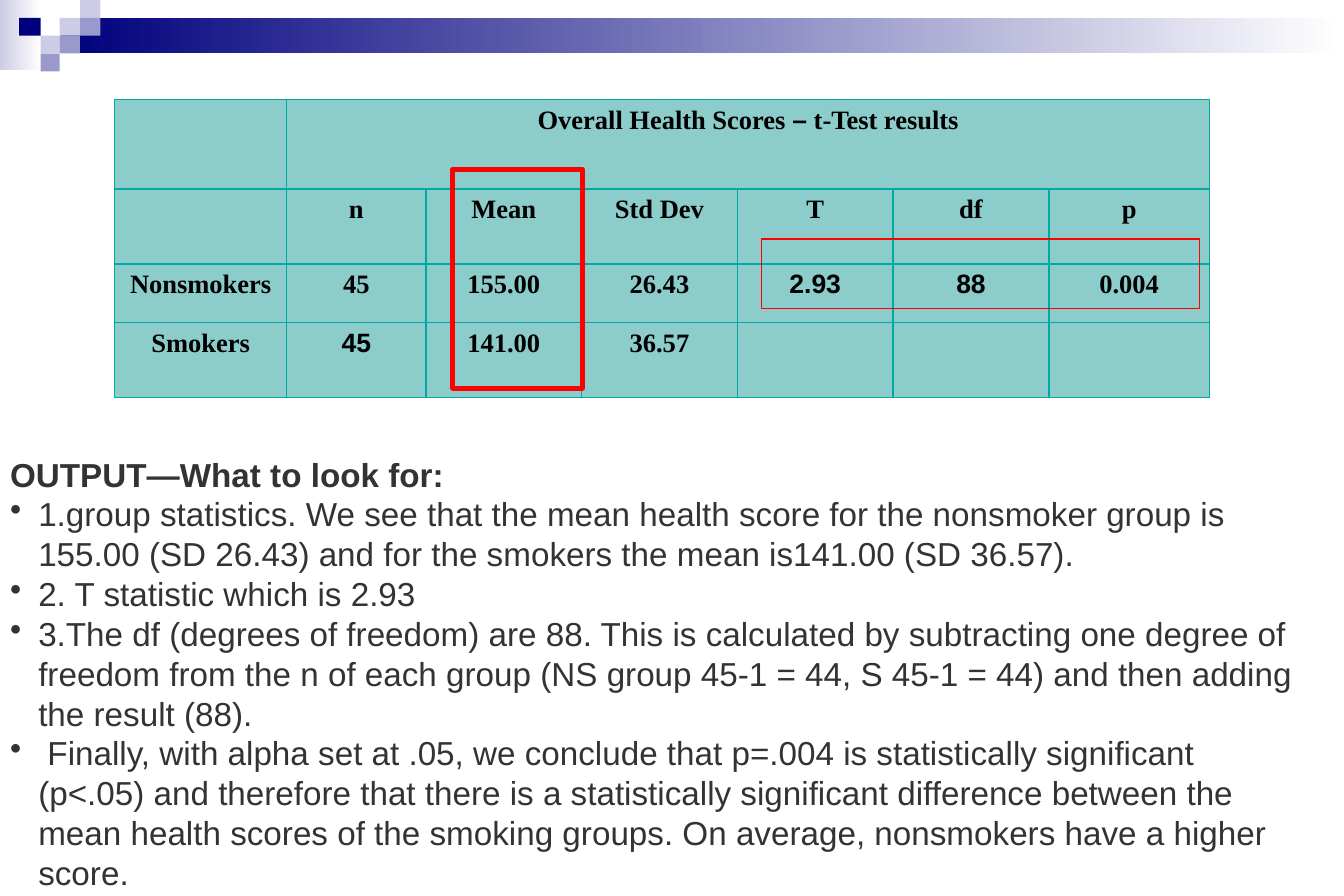
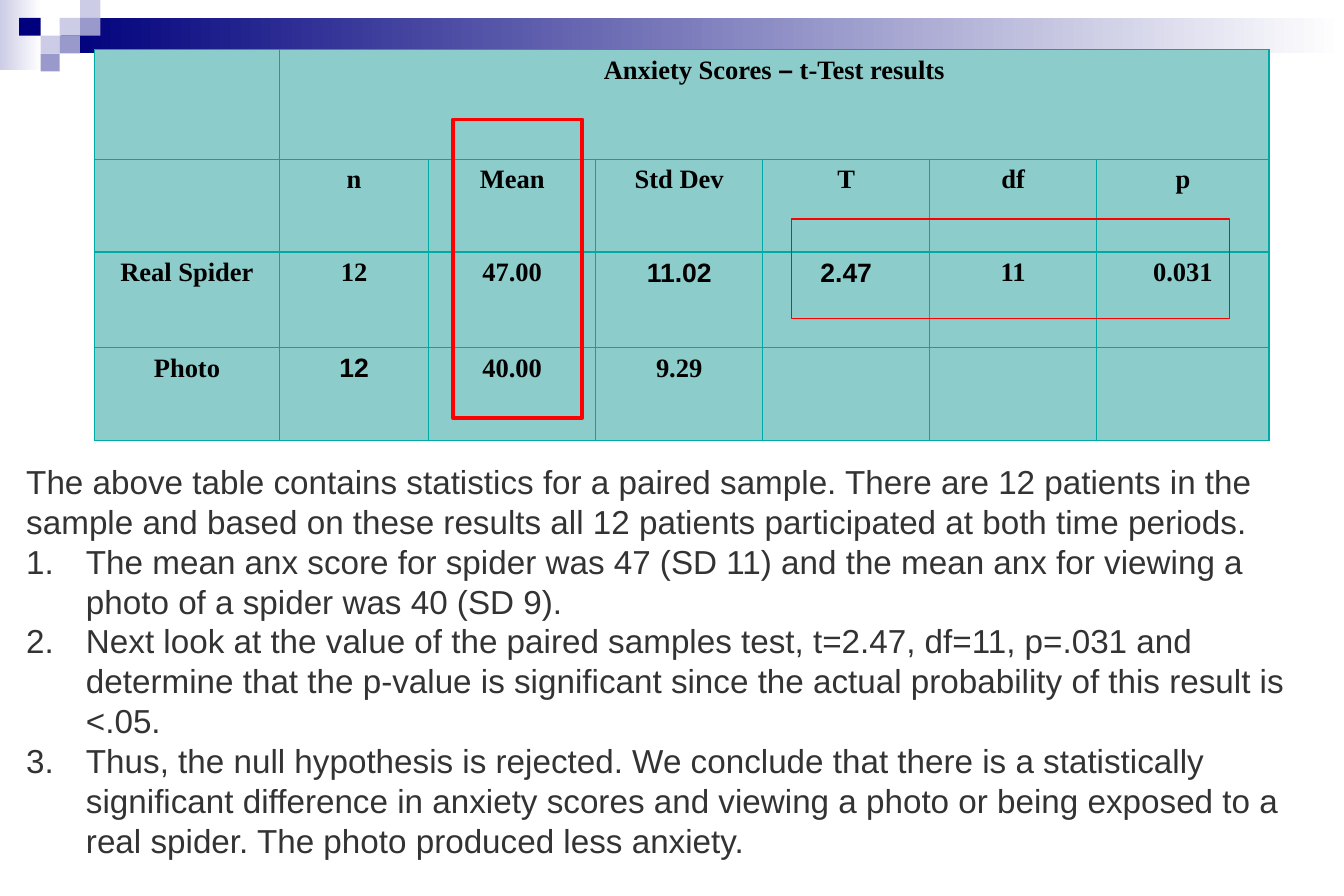
from lxml import etree
from pptx import Presentation
from pptx.dml.color import RGBColor
from pptx.enum.shapes import MSO_SHAPE
from pptx.enum.text import MSO_AUTO_SIZE, PP_ALIGN
from pptx.oxml.ns import qn
from pptx.util import Pt

RECTANGLE = MSO_SHAPE.RECTANGLE
CENTER = PP_ALIGN.CENTER
GROW = MSO_AUTO_SIZE.SHAPE_TO_FIT_TEXT

SERIF, SANS = "Times New Roman", "Arial"
COLORS = {
    "navy": "00007D", "violet": "9999CC", "lilac": "CCCCE6", "white": "FFFFFF",
    "cell": "8CCCCA", "border": "00A9A4", "mark": "FF0000",
    "text": "333333", "black": "000000",
}
CELL_FONT = {"size": Pt(16), "bold": True}
BODY_FONT = {"size": Pt(20), "name": SANS}

# Header mosaic: grid lines, then (column, row, colour) of each tile
TILE_X = (11.5, 24.5, 36, 48.25, 60.5)
TILE_HEIGHT = 10.75
TILES = (
    (2, 1, "lilac"), (3, 0, "lilac"), (3, 1, "violet"), (1, 2, "lilac"),
    (0, 1, "navy"), (2, 2, "violet"), (1, 3, "violet"),
)
COLUMN_SHARES = (104, 84, 94, 94, 94, 94, 97)
COLUMN_HEADS = ["", "n", "Mean", "Std Dev", "T", "df", "p"]


def sans(text):
    return [(text, SANS)]


def table_title(subject):
    return [(subject + " ", SERIF), ("–", SANS), (" t-Test results", SERIF)]


def color(name):
    return RGBColor.from_string(COLORS[name])


class Deck:
    """Holds the shared style and the slide being drawn."""

    def __init__(self):
        self.presentation = Presentation()
        self.presentation.slide_width = Pt(810)
        self.presentation.slide_height = Pt(540)
        self.slide = None

    def new_slide(self):
        layout = self.presentation.slide_layouts[6]
        self.slide = self.presentation.slides.add_slide(layout)
        self.gradient(0, 0, 25, 42, "lilac")
        self.gradient(36.75, 10.75, 773.25, 21.5, "navy")
        for column, row, name in TILES:
            left = TILE_X[column]
            tile = self.rectangle(left, row * TILE_HEIGHT,
                                  TILE_X[column + 1] - left, TILE_HEIGHT)
            tile.fill.solid()
            tile.fill.fore_color.rgb = color(name)

    def rectangle(self, *box):
        """Add a rectangle without fill, line or shadow."""
        shape = self.slide.shapes.add_shape(RECTANGLE, *map(Pt, box))
        shape.shadow.inherit = False
        shape.fill.background()
        shape.line.fill.background()
        return shape

    def gradient(self, left, top, width, height, name):
        """Add a band that fades to white towards the right."""
        fill = self.rectangle(left, top, width, height).fill
        fill.gradient()
        fill.gradient_angle = 0
        for stop, stop_color in zip(fill.gradient_stops, (name, "white")):
            stop.color.rgb = color(stop_color)

    def frame(self, left, top, width, height, weight):
        line = self.rectangle(left, top, width, height).line
        line.color.rgb = color("mark")
        line.width = Pt(weight)

    def run(self, paragraph, text, color_name, **font_values):
        run = paragraph.add_run()
        run.text = text
        run.font.color.rgb = color(color_name)
        for attribute, value in font_values.items():
            setattr(run.font, attribute, value)

    def cell(self, cell, content):
        """Fill a cell with a serif string or a list of (text, font) runs."""
        properties = cell._tc.get_or_add_tcPr()
        for side in ("a:lnL", "a:lnR", "a:lnT", "a:lnB"):
            line = etree.SubElement(properties, qn(side), w=str(Pt(1)))
            fill = etree.SubElement(line, qn("a:solidFill"))
            etree.SubElement(fill, qn("a:srgbClr"), val=COLORS["border"])
        cell.fill.solid()
        cell.fill.fore_color.rgb = color("cell")
        paragraph = cell.text_frame.paragraphs[0]
        paragraph.alignment = CENTER
        if isinstance(content, str):
            content = [(content, SERIF)] if content else []
        for text, font in content:
            self.run(paragraph, text, "black", name=font, **CELL_FONT)

    def results_table(self, left, top, width, heights, title, data):
        rows = [["", title] + [""] * 5, COLUMN_HEADS] + data
        table = self.slide.shapes.add_table(
            len(rows), len(COLUMN_SHARES), Pt(left), Pt(top),
            Pt(width), Pt(sum(heights))).table
        table.first_row = table.horz_banding = False
        for column, share in zip(table.columns, COLUMN_SHARES):
            column.width = Pt(width * share / sum(COLUMN_SHARES))
        for row, height, contents in zip(table.rows, heights, rows):
            row.height = Pt(height)
            for cell, content in zip(row.cells, contents):
                self.cell(cell, content)
        table.cell(0, 1).merge(table.cell(0, len(COLUMN_SHARES) - 1))

    def body(self, box, lead, items, indent, marker, lead_bold=False):
        """Add a lead paragraph and a list; marker is a (tag, attributes) pair."""
        text_box = self.slide.shapes.add_textbox(*map(Pt, box))
        frame = text_box.text_frame
        frame.word_wrap = True
        frame.auto_size = GROW
        for index, text in enumerate([lead] + items):
            paragraph = frame.add_paragraph() if index else frame.paragraphs[0]
            paragraph.line_spacing = Pt(24)
            if index:
                properties = paragraph._p.get_or_add_pPr()
                properties.set("marL", str(Pt(indent)))
                properties.set("indent", str(-Pt(indent)))
                tag, attributes = marker
                etree.SubElement(properties, qn(tag), attributes)
            self.run(paragraph, text, "text",
                     bold=lead_bold and index == 0, **BODY_FONT)


def health_slide(deck):
    deck.new_slide()
    deck.results_table(
        69, 60, 660, (54, 45, 35.5, 45), table_title("Overall Health Scores"),
        [["Nonsmokers", "45", "155.00", "26.43", sans("2.93"), sans("88"), "0.004"],
         ["Smokers", sans("45"), "141.00", "36.57", "", "", ""]])
    deck.frame(273, 102, 78, 132, 3)
    deck.frame(459, 144, 264, 42, 1)
    deck.body(
        (-1, 270, 792, 250), "OUTPUT—What to look for:",
        ["1.group statistics. We see that the mean health score for the nonsmoker "
         "group is 155.00 (SD 26.43) and for the smokers the mean is141.00 (SD 36.57).",
         "2. T statistic which is 2.93",
         "3.The df (degrees of freedom) are 88. This is calculated by subtracting one "
         "degree of freedom from the n of each group (NS group 45-1 = 44, S 45-1 = 44) "
         "and then adding the result (88).",
         " Finally, with alpha set at .05, we conclude that p=.004 is statistically "
         "significant (p<.05) and therefore that there is a statistically significant "
         "difference between the mean health scores of the smoking groups. On average, "
         "nonsmokers have a higher score."],
        17, ("a:buChar", {"char": "•"}), lead_bold=True)


def anxiety_slide(deck):
    deck.new_slide()
    deck.results_table(
        57, 30, 708, (66, 56, 57.5, 56), table_title("Anxiety Scores"),
        [["Real Spider", "12", "47.00", sans("11.02"), sans("2.47"), "11", "0.031"],
         ["Photo", sans("12"), "40.00", "9.29", "", "", ""]])
    deck.frame(273, 72, 78, 180, 2.25)
    deck.frame(477, 132, 264, 60, 1)
    deck.body(
        (8.75, 274.5, 795, 250),
        "The above table contains statistics for a paired sample. There are 12 patients "
        "in the sample and based on these results all 12 patients participated at both "
        "time periods.",
        ["The mean anx score for spider was 47 (SD 11) and the mean anx for viewing a "
         "photo of a spider was 40 (SD 9).",
         "Next look at the value of the paired samples test, t=2.47, df=11, p=.031 and "
         "determine that the p-value is significant since the actual probability of "
         "this result is <.05.",
         "Thus, the null hypothesis is rejected. We conclude that there is a "
         "statistically significant difference in anxiety scores and viewing a photo or "
         "being exposed to a real spider. The photo produced less anxiety."],
        36, ("a:buAutoNum", {"type": "arabicPeriod"}))


def main():
    deck = Deck()
    health_slide(deck)
    anxiety_slide(deck)
    deck.presentation.save("out.pptx")


if __name__ == "__main__":
    main()
